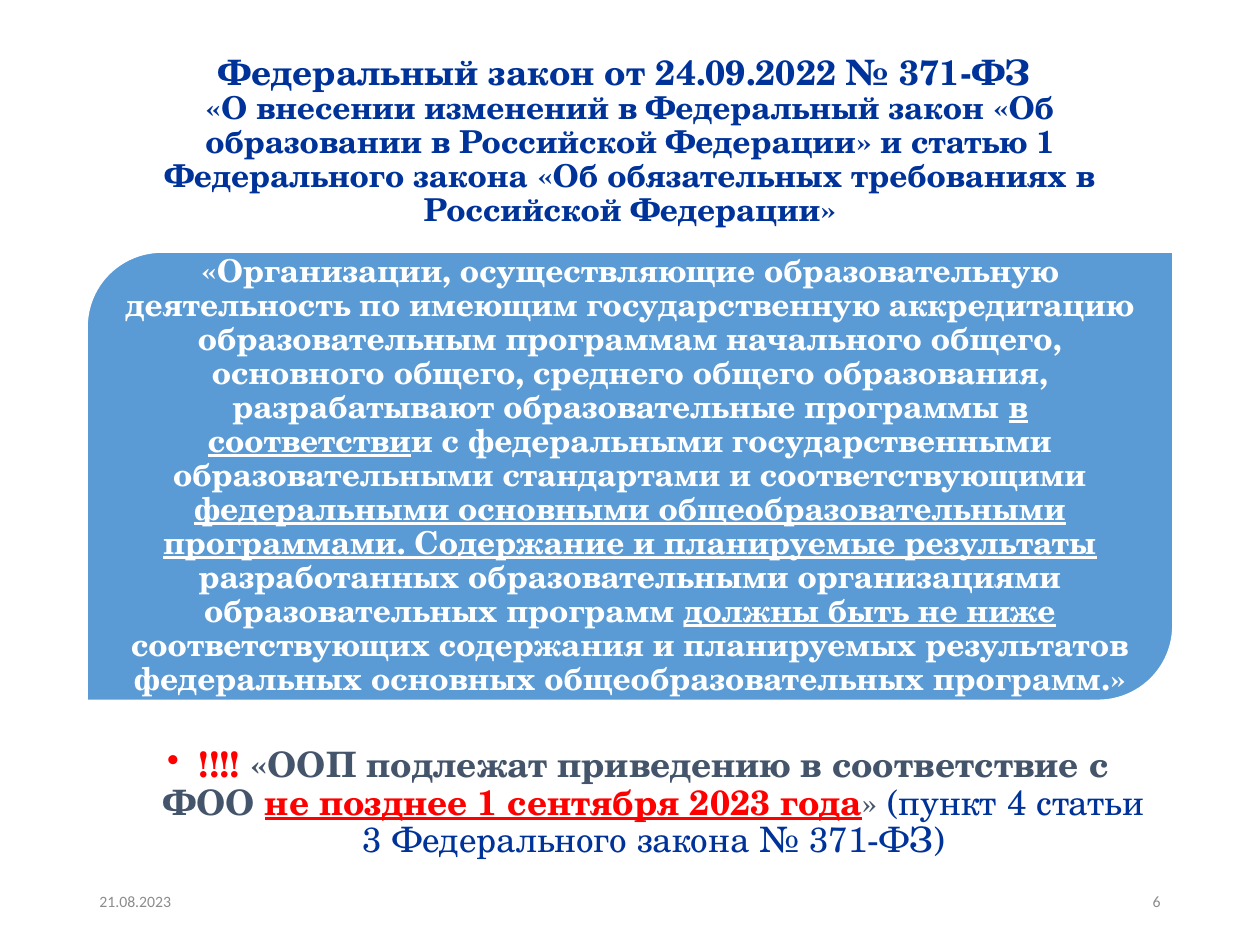
from dataclasses import dataclass

from lxml.etree import SubElement
from pptx import Presentation
from pptx.dml.color import RGBColor
from pptx.enum.shapes import MSO_SHAPE
from pptx.enum.text import MSO_ANCHOR, PP_ALIGN
from pptx.oxml.ns import qn
from pptx.shapes.autoshape import Shape
from pptx.slide import Slide
from pptx.text.text import TextFrame, _Paragraph
from pptx.util import Pt

COLORS = {
    "navy": "003399",
    "panel": "5B9BD5",
    "white": "FFFFFF",
    "red": "FF0000",
    "slate": "44546A",
    "footer": "8C8C8C",
}
SERIF = "TeX Gyre Schola"
SANS = "Calibri"
LEFT, WIDTH = 49.7, 620.6
FOOTER_WIDTH = 162


@dataclass(frozen=True)
class Box:
    left: float
    top: float
    width: float
    height: float

    def lengths(self) -> tuple[Pt, Pt, Pt, Pt]:
        return Pt(self.left), Pt(self.top), Pt(self.width), Pt(self.height)


@dataclass(frozen=True)
class Span:
    text: str
    size: float
    color: str
    bold: bool = True
    underline: bool = False
    font: str = SERIF


def color(name: str) -> RGBColor:
    return RGBColor.from_string(COLORS[name])


def add_spans(paragraph: _Paragraph, spans: list[Span]) -> None:
    for span in spans:
        run = paragraph.add_run()
        run.text = span.text
        run.font.name = span.font
        run.font.size = Pt(span.size)
        run.font.bold = span.bold
        run.font.underline = span.underline
        run.font.color.rgb = color(span.color)


def set_frame(frame: TextFrame, anchor: MSO_ANCHOR, align: PP_ALIGN,
              margins: tuple[float, float, float, float] = (7.2, 3.6, 7.2, 3.6),
              spacing: float = 0.9) -> _Paragraph:
    frame.word_wrap = True
    frame.vertical_anchor = anchor
    (frame.margin_left, frame.margin_top,
     frame.margin_right, frame.margin_bottom) = map(Pt, margins)
    paragraph = frame.paragraphs[0]
    paragraph.alignment = align
    paragraph.line_spacing = spacing
    return paragraph


def add_text(slide: Slide, box: Box) -> TextFrame:
    return slide.shapes.add_textbox(*box.lengths()).text_frame


def add_panel(slide: Slide, box: Box) -> Shape:
    panel = slide.shapes.add_shape(MSO_SHAPE.ROUND_2_DIAG_RECTANGLE, *box.lengths())
    panel.shadow.inherit = False
    panel.fill.solid()
    panel.fill.fore_color.rgb = color("panel")
    panel.line.color.rgb = color("white")
    panel.line.width = Pt(1)
    return panel


def add_bullet(paragraph: _Paragraph, indent: float) -> None:
    properties = paragraph._p.get_or_add_pPr()
    properties.set("marL", str(Pt(indent)))
    properties.set("indent", str(-Pt(indent)))
    SubElement(properties, qn("a:buChar")).set("char", "•")


def add_footer(slide: Slide, left: float, text: str, align: PP_ALIGN) -> None:
    frame = add_text(slide, Box(left, 500.4, FOOTER_WIDTH, 28.8))
    paragraph = set_frame(frame, MSO_ANCHOR.MIDDLE, align, spacing=1.0)
    add_spans(paragraph, [Span(text, 9, "footer", bold=False, font=SANS)])


def main() -> None:
    """Build the slide on the federal law and save it."""
    deck = Presentation()
    deck.slide_width, deck.slide_height = Pt(720), Pt(540)
    slide = deck.slides.add_slide(deck.slide_layouts[6])

    title = set_frame(add_text(slide, Box(LEFT, 28.8, WIDTH, 104.4)),
                      MSO_ANCHOR.MIDDLE, PP_ALIGN.CENTER)
    add_spans(title, [Span("Федеральный закон от 24.09.2022 № 371-ФЗ ", 20, "navy")])
    title.add_line_break()
    add_spans(title, [Span(
        "«О внесении изменений в Федеральный закон «Об образовании в Российской "
        "Федерации» и статью 1 Федерального закона «Об обязательных требованиях "
        "в Российской Федерации»", 18, "navy")])

    law_parts = [
        ("«Организации, осуществляющие образовательную деятельность по имеющим "
         "государственную аккредитацию образовательным программам начального общего, "
         "основного общего, среднего общего образования, разрабатывают "
         "образовательные программы ", False),
        ("в соответстви", True),
        ("и с федеральными государственными образовательными стандартами и "
         "соответствующими ", False),
        ("федеральными основными общеобразовательными программами. Содержание и "
         "планируемые результаты ", True),
        ("разработанных образовательными организациями образовательных программ ", False),
        ("должны быть не ниже ", True),
        ("соответствующих содержания и планируемых результатов федеральных основных "
         "общеобразовательных программ.»", False),
    ]
    panel = add_panel(slide, Box(LEFT, 144, WIDTH, 256.3))
    law = set_frame(panel.text_frame, MSO_ANCHOR.MIDDLE, PP_ALIGN.CENTER, (5, 5, 5, 5))
    add_spans(law, [Span(text, 18, "white", underline=underlined)
                    for text, underlined in law_parts])

    deadline = set_frame(add_text(slide, Box(LEFT, 400.3, WIDTH, 85.7)),
                         MSO_ANCHOR.TOP, PP_ALIGN.CENTER, (19.4, 26.6, 10.1, 2.2))
    add_bullet(deadline, 18)
    add_spans(deadline, [
        Span("!!!! ", 20, "red"),
        Span("«ООП подлежат приведению в соответствие с ФОО ", 20, "slate"),
        Span("не позднее 1 сентября 2023 года", 20, "red", underline=True),
        Span("» ", 20, "slate", bold=False),
        Span("(пункт 4 статьи 3 Федерального закона № 371-ФЗ)", 20, "navy", bold=False),
    ])

    add_footer(slide, LEFT, "21.08.2023", PP_ALIGN.LEFT)
    add_footer(slide, LEFT + WIDTH - FOOTER_WIDTH, "6", PP_ALIGN.RIGHT)
    deck.save("out.pptx")


if __name__ == "__main__":
    main()
